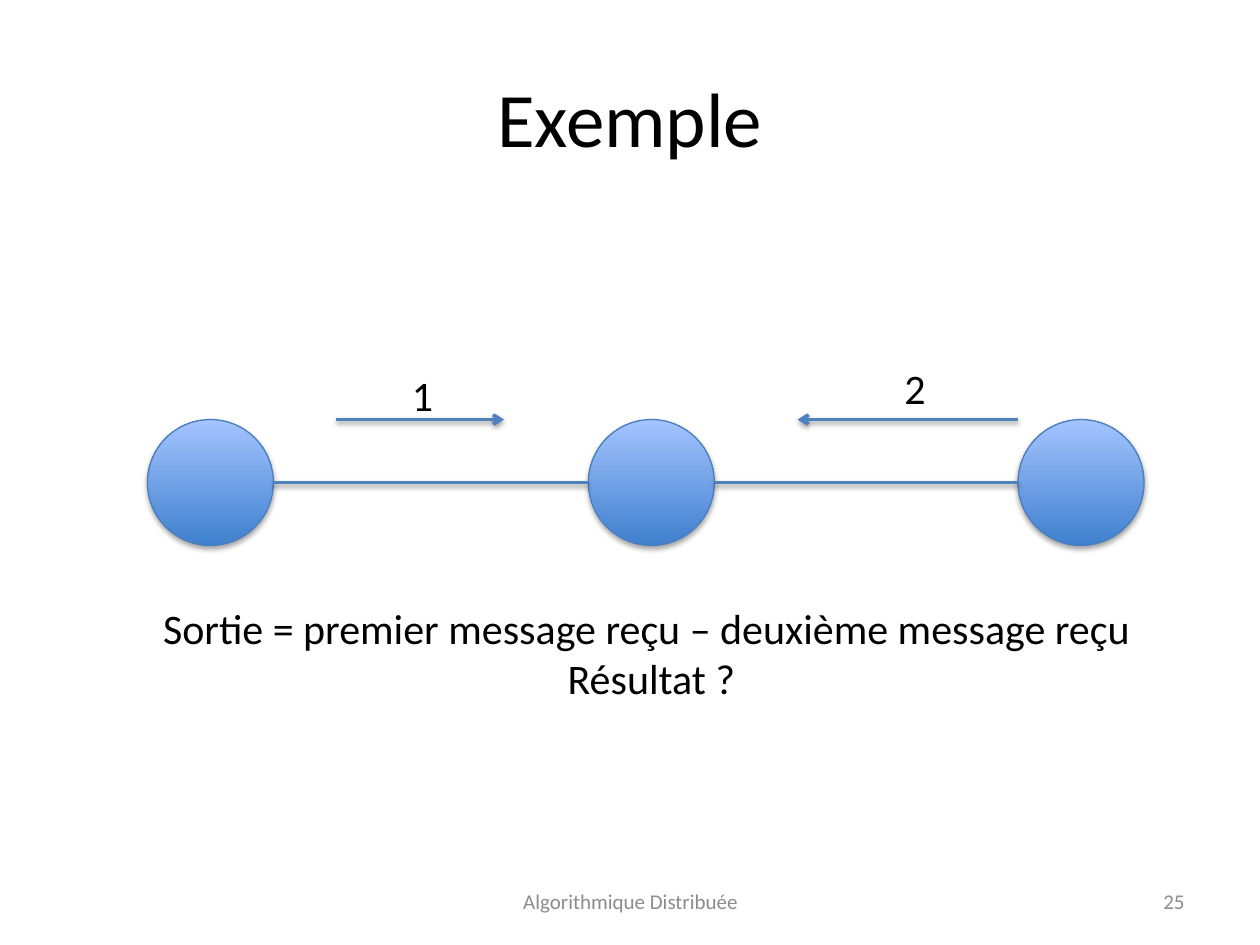
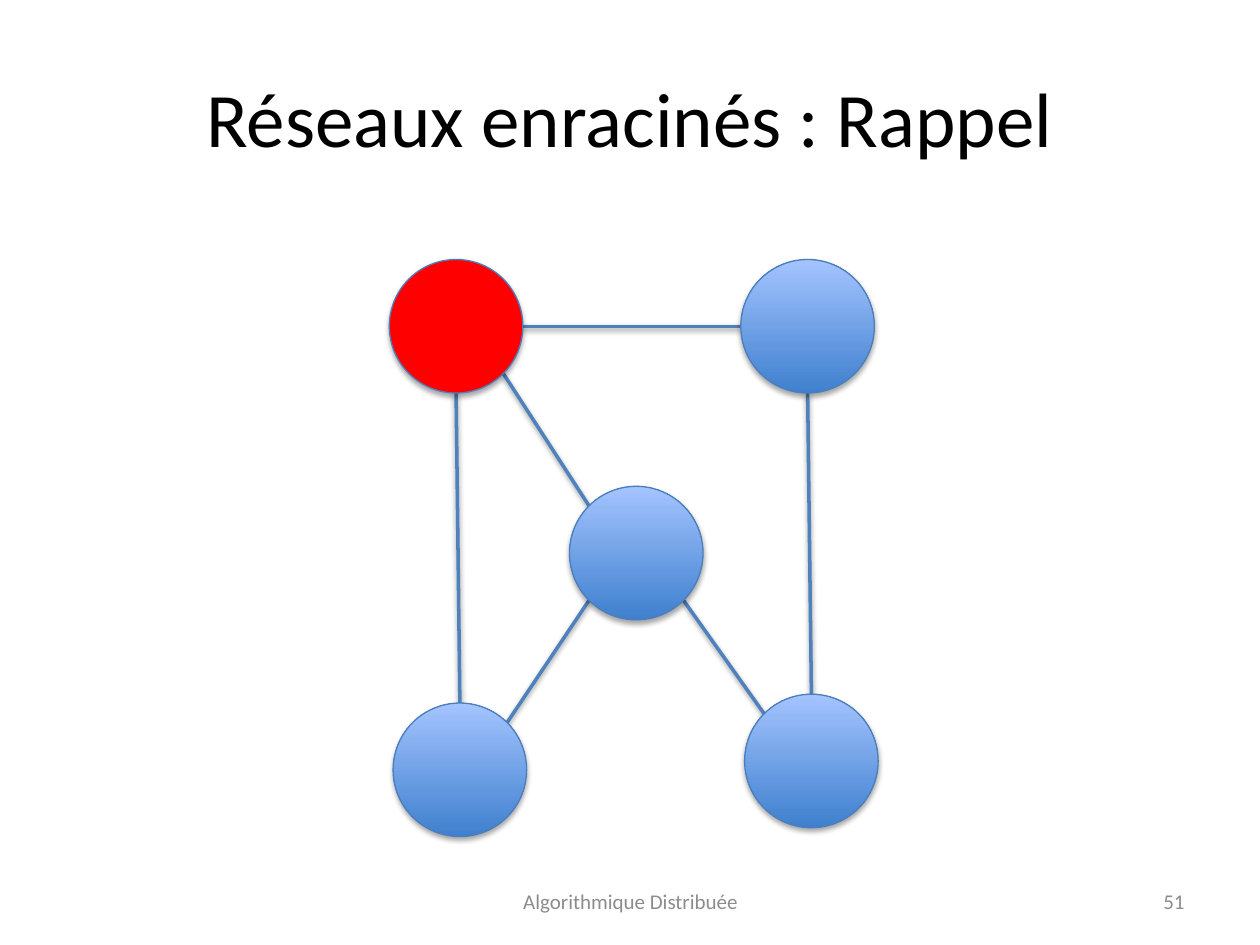
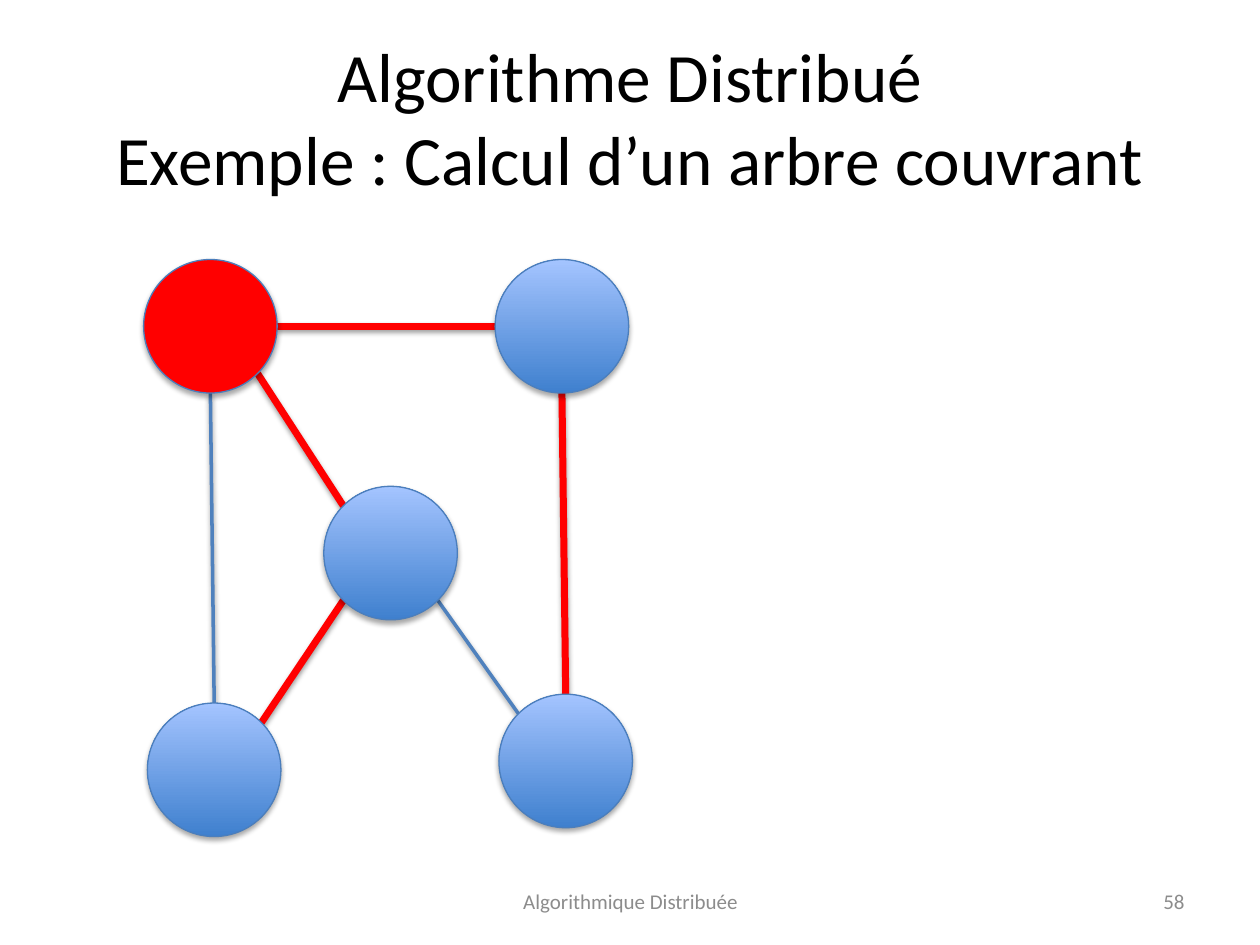
"""Build three slides on distributed algorithms."""
from math import cos, radians, sin
from typing import NamedTuple

from lxml import etree
from pptx import Presentation
from pptx.dml.color import RGBColor
from pptx.enum.shapes import MSO_CONNECTOR, MSO_SHAPE
from pptx.enum.text import MSO_ANCHOR, MSO_AUTO_SIZE, PP_ALIGN
from pptx.oxml import parse_xml
from pptx.oxml.ns import nsdecls, qn
from pptx.util import Inches, Pt

STRAIGHT = MSO_CONNECTOR.STRAIGHT
OVAL = MSO_SHAPE.OVAL
TOP, MIDDLE = MSO_ANCHOR.TOP, MSO_ANCHOR.MIDDLE
NO_AUTOFIT = MSO_AUTO_SIZE.NONE
LEFT, CENTER, RIGHT = PP_ALIGN.LEFT, PP_ALIGN.CENTER, PP_ALIGN.RIGHT

FONT = "Calibri"
BLACK, GREY, RED = "000000", "8C8C8C", "FF0000"
NODE_DARK, NODE_LIGHT, NODE_LINE, EDGE_BLUE = "3F80CE", "A4C4FF", "4B7EBC", "4F81BD"
FOOTER = "Algorithmique Distribuée"
TITLE_ONLY_LAYOUT = 5


class Box(NamedTuple):
    """Position and size in inches."""
    left: float
    top: float
    width: float
    height: float


class Point(NamedTuple):
    """Position in inches."""
    x: float
    y: float


class Node(NamedTuple):
    """Circle of a network, placed by its top left corner."""
    left: float
    top: float
    diameter: float
    is_root: bool = False

    def rim(self, degrees: float) -> Point:
        """Return the point of the rim at a clockwise angle from the right."""
        radius = self.diameter / 2
        angle = radians(degrees)
        return Point(self.left + radius * (1 + cos(angle)),
                     self.top + radius * (1 + sin(angle)))


class Edge(NamedTuple):
    """Link between two named nodes, with the rim angle at each end."""
    start: str
    start_angle: float
    end: str
    end_angle: float


TITLE_BOX = Box(0.5, 0.3, 9, 1.25)
FOOTER_BOX = Box(3.42, 6.95, 3.17, 0.4)
NUMBER_BOX = Box(7.17, 6.95, 2.33, 0.4)

CHAIN = [Node(left, 3.33, 1) for left in (1.17, 4.67, 8.08)]

NETWORK_DIAMETER = 1.06
NETWORK = {
    "right": Node(5.88, 2.06, NETWORK_DIAMETER),
    "root": Node(3.09, 2.06, NETWORK_DIAMETER, is_root=True),
    "middle": Node(4.52, 3.86, NETWORK_DIAMETER),
    "bottom right": Node(5.91, 5.51, NETWORK_DIAMETER),
    "bottom left": Node(3.12, 5.58, NETWORK_DIAMETER),
}
TREE_EDGES = [
    Edge("root", 45, "middle", 225),
    Edge("right", 90, "bottom right", 270),
    Edge("middle", 135, "bottom left", 315),
    Edge("root", 0, "right", 180),
]
OTHER_EDGES = [
    Edge("middle", 45, "bottom right", 225),
    Edge("root", 90, "bottom left", 270),
]


def rgb(colour: str) -> RGBColor:
    """Turn a hex string into a colour."""
    return RGBColor.from_string(colour)


def place(shape, box: Box) -> None:
    """Move and size a shape."""
    shape.left, shape.top, shape.width, shape.height = map(Inches, box)


def write(shape, text: str, *, size: float, colour: str = BLACK, align=LEFT,
          anchor=TOP, wrap: bool = True) -> None:
    """Fill a shape with formatted text, one paragraph a line."""
    frame = shape.text_frame
    frame.text = text
    frame.auto_size = NO_AUTOFIT
    frame.word_wrap = wrap
    frame.vertical_anchor = anchor
    for paragraph in frame.paragraphs:
        paragraph.alignment = align
        paragraph.font.name = FONT
        paragraph.font.size = Pt(size)
        paragraph.font.color.rgb = rgb(colour)


def add_text(slide, box: Box, text: str, **text_format) -> None:
    """Add a text box."""
    write(slide.shapes.add_textbox(*map(Inches, box)), text, **text_format)


def add_shadow(shape, distance: float, opacity: int) -> None:
    """Cast a soft black shadow straight down."""
    shape._element.spPr.append(parse_xml(
        f'<a:effectLst {nsdecls("a")}><a:outerShdw blurRad="{Pt(3.1)}" '
        f'dist="{Pt(distance)}" dir="5400000" rotWithShape="0">'
        f'<a:srgbClr val="{BLACK}"><a:alpha val="{opacity * 1000}"/></a:srgbClr>'
        '</a:outerShdw></a:effectLst>'))


def add_node(slide, node: Node) -> None:
    """Draw a node, plain red for the root and shaded blue otherwise."""
    box = Box(node.left, node.top, node.diameter, node.diameter)
    circle = slide.shapes.add_shape(OVAL, *map(Inches, box))
    if node.is_root:
        circle.fill.solid()
        circle.fill.fore_color.rgb = rgb(RED)
    else:
        circle.fill.gradient()
        circle.fill.gradient_angle = 90
        for stop, colour in zip(circle.fill.gradient_stops, (NODE_DARK, NODE_LIGHT)):
            stop.color.rgb = rgb(colour)
    circle.line.color.rgb = rgb(NODE_LINE)
    circle.line.width = Pt(0.75)
    add_shadow(circle, 1.8, 35)


def add_line(slide, start: Point, end: Point, *, colour: str = EDGE_BLUE,
             width: float = 2, arrow: bool = False) -> None:
    """Draw a line, with an arrowhead at its end if asked."""
    line = slide.shapes.add_connector(STRAIGHT, *map(Inches, start + end))
    line.line.color.rgb = rgb(colour)
    line.line.width = Pt(width)
    if arrow:
        etree.SubElement(line.line._get_or_add_ln(), qn("a:tailEnd"), type="arrow")
    add_shadow(line, 1.6, 38)


def add_slide(presentation, title: str, number: int, title_size: float = 44):
    """Add a slide with its title, footer and number."""
    slide = presentation.slides.add_slide(presentation.slide_layouts[TITLE_ONLY_LAYOUT])
    place(slide.shapes.title, TITLE_BOX)
    write(slide.shapes.title, title, size=title_size, align=CENTER, anchor=MIDDLE)
    for box, text, align in ((FOOTER_BOX, FOOTER, CENTER), (NUMBER_BOX, str(number), RIGHT)):
        add_text(slide, box, text, size=12, colour=GREY, align=align, anchor=MIDDLE)
    return slide


def add_network(slide, shift: float = 0, **tree_format) -> None:
    """Draw the rooted network, moved sideways, with a format for its tree edges."""
    nodes = {name: node._replace(left=node.left + shift) for name, node in NETWORK.items()}
    for edges, line_format in ((TREE_EDGES, tree_format), (OTHER_EDGES, {})):
        for edge in edges:
            add_line(slide, nodes[edge.start].rim(edge.start_angle),
                     nodes[edge.end].rim(edge.end_angle), **line_format)
    for node in nodes.values():
        add_node(slide, node)


def add_chain(slide) -> None:
    """Draw three nodes in a row and the messages sent to the middle one."""
    for node in CHAIN:
        add_node(slide, node)
    for node, following in zip(CHAIN, CHAIN[1:]):
        add_line(slide, node.rim(0), following.rim(180))
    message_y = CHAIN[0].top
    for start, end in ((2.67, 4), (8.08, 6.33)):
        add_line(slide, Point(start, message_y), Point(end, message_y), arrow=True)
    for text, left, top in (("1", 3.17, 2.88), ("2", 7.08, 2.83)):
        add_text(slide, Box(left, top, 0.37, 0.5), text, size=24, wrap=False)
    add_text(slide, Box(0.92, 4.73, 8.5, 0.91),
             "Sortie = premier message reçu – deuxième message reçu \nRésultat ?",
             size=24, align=CENTER)


def main() -> None:
    """Build and save the presentation."""
    presentation = Presentation()
    presentation.slide_width, presentation.slide_height = Inches(10), Inches(7.5)
    add_chain(add_slide(presentation, "Exemple", 25))
    add_network(add_slide(presentation, "Réseaux enracinés : Rappel", 51))
    tree_slide = add_slide(
        presentation, "Algorithme Distribué\vExemple : Calcul d’un arbre couvrant", 58, 39.6)
    add_network(tree_slide, shift=-1.95, colour=RED, width=4)
    presentation.save("out.pptx")


if __name__ == "__main__":
    main()
